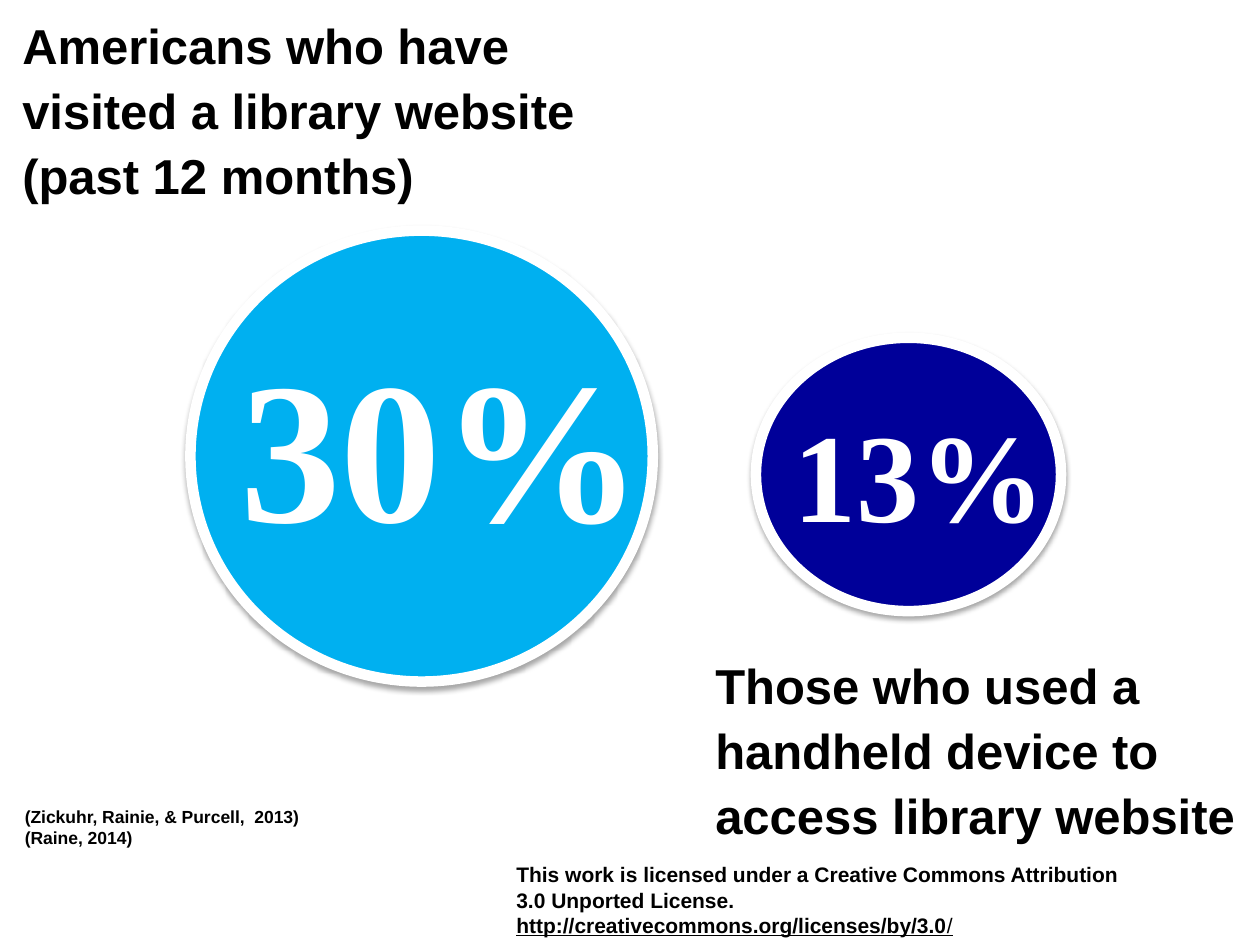
from lxml import etree
from pptx import Presentation
from pptx.dml.color import RGBColor
from pptx.enum.shapes import MSO_SHAPE
from pptx.enum.text import MSO_ANCHOR, PP_ALIGN
from pptx.oxml.ns import qn
from pptx.util import Cm, Pt

OVAL = MSO_SHAPE.OVAL
TOP, BOTTOM = MSO_ANCHOR.TOP, MSO_ANCHOR.BOTTOM
LEFT, CENTER = PP_ALIGN.LEFT, PP_ALIGN.CENTER

COLORS = {"text": "000000", "white": "FFFFFF", "visited": "00B0F0",
          "handheld": "000099", "shadow": "000000"}

# Places are left, top, width, height in centimetres.
HEADINGS = [
    ("Americans who have visited a library website (past 12 months)",
     (0.2, 0.53, 12.06, 3.71)),
    ("Those who used a handheld device to access library website",
     (14.17, 11.86, 12.27, 5.28)),
]
SHARES = [
    {"label": "30%", "fill": "visited", "size": 115,
     "circle": (3.84, 4.65, 9.32, 9.09), "place": (3.4, 6.35, 11, 5.18)},
    {"label": "13%", "fill": "handheld", "size": 72,
     "circle": (15.24, 6.81, 6.15, 5.51), "place": (15.67, 7.87, 5.72, 3.33)},
]
CITATIONS = ["(Zickuhr, Rainie, & Purcell,  2013)", "(Raine, 2014)"]
CITATIONS_PLACE = (0.25, 16.13, 6.2, 1.12)
LICENSE = [[
    ("This work is licensed under a Creative Commons Attribution "
     "3.0 Unported License. ", {}),
    ("http://creativecommons.org/licenses/by/3.0", {"underline": True}),
    ("/", {"underline": True, "bold": False}),
]]
LICENSE_PLACE = (10.16, 17.25, 12.9, 1.8)


def rgb(name):
    return RGBColor.from_string(COLORS[name])


def add_text(page, paragraphs, place, size, font="Arial", color="text",
             align=LEFT, anchor=TOP, spacing=None, wrap=True):
    """Add a text box; a paragraph is a string or a list of (text, format) spans."""
    box = page.shapes.add_textbox(*map(Cm, place))
    frame = box.text_frame
    frame.word_wrap = wrap
    frame.vertical_anchor = anchor
    for index, spans in enumerate(paragraphs):
        para = frame.add_paragraph() if index else frame.paragraphs[0]
        para.alignment = align
        if spacing:
            para.line_spacing = spacing
        if isinstance(spans, str):
            spans = [(spans, {})]
        for text, style in spans:
            span = para.add_run()
            span.text = text
            span.font.name = font
            span.font.size = Pt(size)
            span.font.color.rgb = rgb(color)
            span.font.bold = style.get("bold", True)
            span.font.underline = style.get("underline")


def add_shadow(shape):
    effects = etree.SubElement(shape._element.spPr, qn("a:effectLst"))
    shadow = etree.SubElement(effects, qn("a:outerShdw"), blurRad=str(Pt(3.1)),
                              dist=str(Pt(1.8)), dir="5400000", rotWithShape="0")
    color = etree.SubElement(shadow, qn("a:srgbClr"), val=COLORS["shadow"])
    etree.SubElement(color, qn("a:alpha"), val="35000")


def add_circle(page, place, fill):
    circle = page.shapes.add_shape(OVAL, *map(Cm, place))
    circle.fill.solid()
    circle.fill.fore_color.rgb = rgb(fill)
    circle.line.color.rgb = rgb("white")
    circle.line.width = Pt(6)
    add_shadow(circle)


def main():
    deck = Presentation()
    deck.slide_width, deck.slide_height = Cm(25.4), Cm(19.05)
    page = deck.slides.add_slide(deck.slide_layouts[6])

    for share in SHARES:
        add_circle(page, share["circle"], share["fill"])
        add_text(page, [share["label"]], share["place"], share["size"],
                 font="Times New Roman", color="white", align=CENTER)
    for heading, place in HEADINGS:
        add_text(page, [heading], place, 28, anchor=BOTTOM, spacing=1.1)
    add_text(page, CITATIONS, CITATIONS_PLACE, 10, wrap=False)
    add_text(page, LICENSE, LICENSE_PLACE, 12)

    deck.save("out.pptx")


if __name__ == "__main__":
    main()
